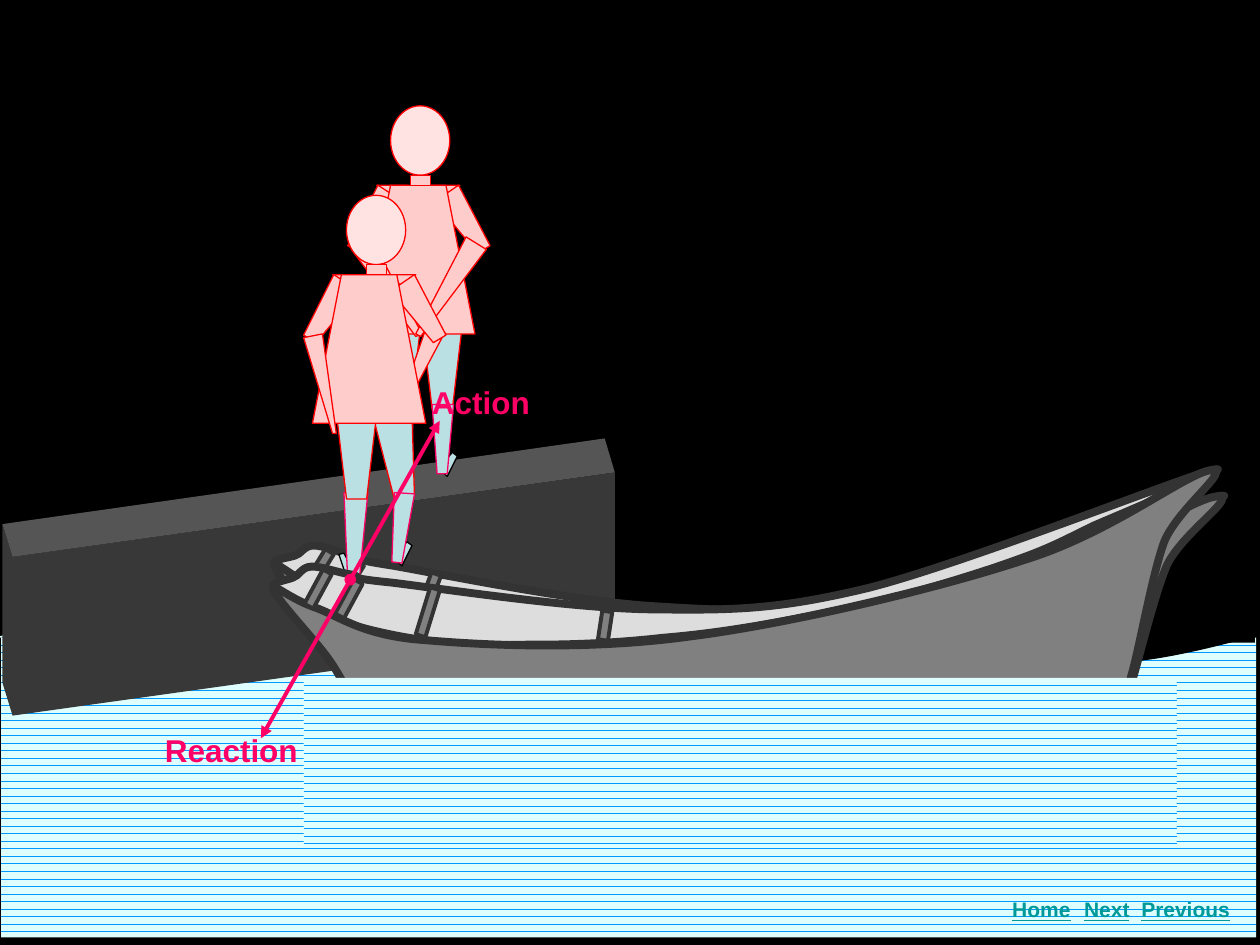
from pptx import Presentation
from pptx.dml.color import RGBColor as Rgb
from pptx.enum.dml import MSO_PATTERN as Pattern
from pptx.enum.shapes import MSO_CONNECTOR as Connector, MSO_SHAPE as Preset
from pptx.enum.text import MSO_AUTO_SIZE as AutoSize, PP_ALIGN as Align
from pptx.oxml import parse_xml
from pptx.oxml.ns import nsdecls, qn
from pptx.util import Cm, Pt

COLORS = {
    "night": "000000", "wave": "0099FF", "water": "DFFFFF",
    "dock": "383838", "dock top": "555555",
    "wood": "808080", "inside": "DDDDDD", "edge": "333333",
    "skin": "FFCCCC", "face": "FFE3E3", "outline": "FF0000",
    "trousers": "BBE0E3", "force": "FF0066", "nav": "009999",
}
SCALE = 2.54  # centimetres in one drawing unit


def units(*values):
    return [Cm(value * SCALE) for value in values]


def move(points, dx, dy):
    return [(x + dx, y + dy) for x, y in points]


class Scene:
    font = "Arial"

    def __init__(self, slide):
        self.slide = slide
        self.layer = slide.shapes
        background = slide.background.fill
        background.solid()
        background.fore_color.rgb = self.color("night")

    def color(self, name):
        return Rgb.from_string(COLORS[name])

    def paint(self, shape, fill, edge=None, weight=0.75):
        shape.shadow.inherit = False
        if fill == "water":
            shape.fill.patterned()
            shape.fill.pattern = Pattern.DASHED_HORIZONTAL
            shape.fill.fore_color.rgb = self.color("wave")
            shape.fill.back_color.rgb = self.color("water")
        else:
            shape.fill.solid()
            shape.fill.fore_color.rgb = self.color(fill)
        if edge:
            shape.line.color.rgb = self.color(edge)
            shape.line.width = Pt(weight)
        else:
            shape.line.fill.background()
        return shape

    def preset(self, kind, box, fill, edge=None, weight=0.75, turn=0):
        shape = self.layer.add_shape(kind, *units(*box))
        shape.rotation = turn
        return self.paint(shape, fill, edge, weight)

    def outline(self, points, fill, edge=None, weight=0.75, close=True, curved=False):
        corners = [units(*point) for point in points]
        builder = self.layer.build_freeform(*corners[0], scale=1.0)
        builder.add_line_segments(corners[1:], close=close)
        shape = builder.convert_to_shape()
        if curved:
            self.bend(shape)
        return self.paint(shape, fill, edge, weight)

    def bend(self, shape):
        """Turn each three straight segments into one Bezier segment."""
        segments = list(shape._element.iter(qn("a:lnTo")))
        for first in range(0, len(segments), 3):
            curve = parse_xml(f'<a:cubicBezTo {nsdecls("a")}/>')
            segments[first].addprevious(curve)
            for segment in segments[first:first + 3]:
                curve.append(segment[0])
                segment.getparent().remove(segment)

    def arrow(self, start, end, head=None):
        line = self.layer.add_connector(Connector.STRAIGHT, *units(*start, *end))
        line.line.color.rgb = self.color("force")
        line.line.width = Pt(2.25)
        stroke = line.line._get_or_add_ln()
        if head:
            stroke.append(parse_xml(f'<a:headEnd {nsdecls("a")} type="{head}"/>'))
        stroke.append(parse_xml(f'<a:tailEnd {nsdecls("a")} type="triangle"/>'))
        line._element.spPr.append(parse_xml(f'<a:effectLst {nsdecls("a")}/>'))

    def text(self, words, box, size, color, align=Align.LEFT, underline=None):
        frame = self.layer.add_textbox(*units(*box)).text_frame
        frame.word_wrap = False
        frame.auto_size = AutoSize.SHAPE_TO_FIT_TEXT
        paragraph = frame.paragraphs[0]
        paragraph.alignment = align
        run = paragraph.add_run()
        run.text = words
        run.font.name, run.font.size = self.font, Pt(size)
        run.font.bold, run.font.underline = True, underline
        run.font.color.rgb = self.color(color)

    def boat(self, dx=0, dy=0, turn=0):
        group = self.slide.shapes.add_group_shape()
        self.layer = group.shapes
        self.outline(RIM, "inside", "edge", 4.5, curved=True)
        self.outline(HULL, "wood", "edge", 4.5, curved=True)
        for *box, angle in BENCHES:
            bench = self.preset(Preset.PARALLELOGRAM, box, "wood", "edge", 2.25, angle)
            bench.adjustments[0] = 0
        group.left += Cm(dx * SCALE)
        group.top += Cm(dy * SCALE)
        group.rotation = turn
        self.layer = self.slide.shapes

    def limbs(self, parts):
        for fill, edge, points in parts:
            self.outline(points, fill, edge)

    def person(self, dx, dy, torso_dx, behind, in_front):
        self.limbs(behind)
        for x in (3.41, 2.99):
            self.preset(Preset.ISOSCELES_TRIANGLE, (x + dx, 1.47 + dy, 0.24, 0.08),
                        "skin", "outline", turn=180)
        for arm in UPPER_ARMS:
            self.outline(move(arm, dx, dy), "skin", "outline")
        self.outline(move(THIGH, dx, dy), "trousers", "outline")
        self.preset(Preset.OVAL, (3.1 + dx, 0.84 + dy, 0.47, 0.55), "face", "outline")
        self.outline(move(TORSO, torso_dx, dy), "skin", "outline")
        self.preset(Preset.RECTANGLE, (3.26 + dx, 1.39 + dy, 0.16, 0.08), "skin", "outline")
        self.limbs(in_front)


# Boat: start point, then three points for each curve
RIM = [(2.18, 4.49), (2.22, 4.54), (2.38, 4.65), (2.57, 4.73), (2.77, 4.81), (3.08, 4.91), (3.36, 4.96),
       (3.63, 5.02), (3.91, 5.03), (4.22, 5.04), (4.54, 5.06), (4.92, 5.06), (5.25, 5.04),
       (5.58, 5.03), (5.88, 5), (6.19, 4.96), (6.51, 4.92), (6.82, 4.87), (7.14, 4.81),
       (7.45, 4.74), (7.82, 4.65), (8.08, 4.57), (8.35, 4.49), (8.45, 4.44), (8.71, 4.33),
       (8.98, 4.23), (9.96, 3.88), (9.66, 3.94), (9.36, 4.01), (7.65, 4.58), (6.9, 4.73),
       (6.15, 4.87), (5.8, 4.85), (5.17, 4.81), (4.54, 4.77), (3.52, 4.56), (3.12, 4.49),
       (2.73, 4.43), (2.91, 4.44), (2.81, 4.41), (2.7, 4.39), (2.57, 4.33), (2.49, 4.33),
       (2.41, 4.33), (2.39, 4.4), (2.34, 4.41), (2.28, 4.43), (2.14, 4.44), (2.18, 4.49)]
HULL = [(2.18, 4.49), (2.19, 4.56), (2.47, 4.89), (2.57, 5.04), (2.68, 5.2), (2.72, 5.35), (2.81, 5.44),
        (2.9, 5.53), (2.68, 5.49), (3.12, 5.59), (3.57, 5.7), (4.66, 6.03), (5.48, 6.07),
        (6.31, 6.11), (7.52, 5.9), (8.08, 5.83), (8.65, 5.76), (8.73, 5.73), (8.87, 5.67),
        (9.01, 5.62), (8.88, 5.71), (8.95, 5.52), (9.02, 5.32), (9.15, 4.75), (9.26, 4.49),
        (9.38, 4.23), (9.84, 3.93), (9.66, 3.94), (9.47, 3.95), (8.86, 4.39), (8.16, 4.57),
        (7.47, 4.76), (6.28, 4.98), (5.48, 5.04), (4.68, 5.11), (3.86, 5.03), (3.36, 4.96),
        (2.86, 4.9), (2.69, 4.73), (2.49, 4.65), (2.3, 4.57), (2.16, 4.43), (2.18, 4.49)]
BENCHES = [(2.62, 4.56, 0.31, 0.08, 301.4), (2.38, 4.47, 0.31, 0.08, 301.4),
           (3.2, 4.7, 0.39, 0.08, 290.1), (4.68, 4.88, 0.23, 0.08, 281.7)]

# Body parts shared by both people
UPPER_ARMS = [[(3.64, 1.47), (3.89, 1.95), (3.79, 2.01), (3.45, 1.6)],
              [(3, 1.47), (2.76, 1.95), (2.86, 2.01), (3.2, 1.6)]]
THIGH = [(3.02, 2.57), (3.1, 3.25), (3.26, 3.25), (3.34, 2.57)]
TORSO = [(2.87, 2.65), (3.1, 1.47), (3.54, 1.47), (3.77, 2.65)]
FOOT = [(3.48, 3.72), (3.59, 3.59), (3.63, 3.62), (3.55, 3.78)]
SKIN, THIGH_STYLE = ("skin", "outline"), ("trousers", "outline")
CALF_STYLE, SHOE = ("trousers", "force"), ("trousers", "night")

# Limbs that differ by pose
BACK_BEHIND = [
    (*SHOE, FOOT),
    (*SHOE, [(3.24, 3.87), (3.12, 3.69), (3.08, 3.7), (3.17, 3.91)]),
    (*CALF_STYLE, [(3.09, 3.21), (3.17, 3.9), (3.26, 3.9), (3.28, 3.2)]),
    (*THIGH_STYLE, [(3.35, 2.57), (3.43, 3.25), (3.59, 3.25), (3.67, 2.57)])]
BACK_FRONT = [
    (*SKIN, [(2.94, 1.88), (3.35, 2.65), (3.3, 2.67), (2.79, 1.98)]),
    (*SKIN, [(3.7, 1.88), (3.3, 2.65), (3.34, 2.67), (3.86, 1.98)]),
    (*CALF_STYLE, [(3.43, 3.21), (3.47, 3.76), (3.55, 3.76), (3.6, 3.21)])]
FRONT_BEHIND = [
    (*SKIN, [(3.39, 2.58), (3.15, 3.27), (3.19, 3.28), (3.53, 2.64)]),
    (*SHOE, [(2.83, 4.58), (2.73, 4.39), (2.69, 4.4), (2.76, 4.61)]),
    (*CALF_STYLE, [(2.73, 3.91), (2.76, 4.61), (2.85, 4.61), (2.92, 3.91)]),
    (*THIGH_STYLE, [(2.96, 3.3), (3.13, 3.96), (3.29, 3.94), (3.27, 3.26)])]
FRONT_FRONT = [
    (*SHOE, move(FOOT, -0.36, 0.71)),
    (*CALF_STYLE, [(3.13, 3.91), (3.11, 4.46), (3.19, 4.47), (3.29, 3.92)]),
    (*SKIN, [(2.56, 2.65), (2.67, 3.44), (2.64, 3.44), (2.41, 2.68)])]


def main():
    deck = Presentation()
    deck.slide_width, deck.slide_height = Cm(25.4), Cm(19.05)
    scene = Scene(deck.slides.add_slide(deck.slide_layouts[6]))
    # Water with alternating crests and troughs
    scene.preset(Preset.RECTANGLE, (0.01, 5.06, 9.96, 2.38), "water")
    scene.preset(Preset.RECTANGLE, (7.51, 5.05, 2.45, 0.05), "night")
    swell = [0, 0.11, 0.21, 0.21, 0.21, 0.11, 0]
    for wave in range(4):
        side, fill = (1, "night") if wave % 2 else (-1, "water")
        points = [(-0.04 + 2.49 * (wave + step / 6), 5.06 + side * rise)
                  for step, rise in enumerate(swell)]
        scene.outline(points, fill, close=False, curved=True)
    scene.preset(Preset.RECTANGLE, (2.53, 5.05, 2.35, 0.05), "night")
    # Dock
    scene.outline([(0.02, 4.16), (0.1, 4.42), (4.88, 3.75), (4.88, 5.01),
                   (0.1, 5.68), (0.02, 5.42)], "dock")
    scene.outline([(0.02, 4.16), (4.8, 3.48), (4.88, 3.75), (0.1, 4.42)], "dock top")
    # Far side of the boat, people, near side of the boat
    scene.boat()
    scene.person(0, 0, 0, BACK_BEHIND, BACK_FRONT)
    scene.person(-0.35, 0.71, -0.39, FRONT_BEHIND, FRONT_FRONT)
    scene.text("Action", (3.33, 2.99, 1.03, 0.4), 18, "force")
    scene.text("Reaction", (1.21, 5.75, 1.27, 0.4), 18, "force")
    scene.boat(0.01, -0.02, 357)
    scene.preset(Preset.RECTANGLE, (2.41, 5.38, 6.93, 1.35), "water")
    # Forces
    scene.arrow((2.78, 4.6), (3.49, 3.34), head="oval")
    scene.arrow((2.78, 4.6), (2.07, 5.86))
    # Navigation
    for words, left, width in (("Home", 7.91, 0.71), ("Next", 8.47, 0.63), ("Previous", 8.94, 0.94)):
        scene.text(words, (left, 7.07, width, 0.3), 12, "nav", Align.CENTER, True)
    deck.save("out.pptx")


if __name__ == "__main__":
    main()
